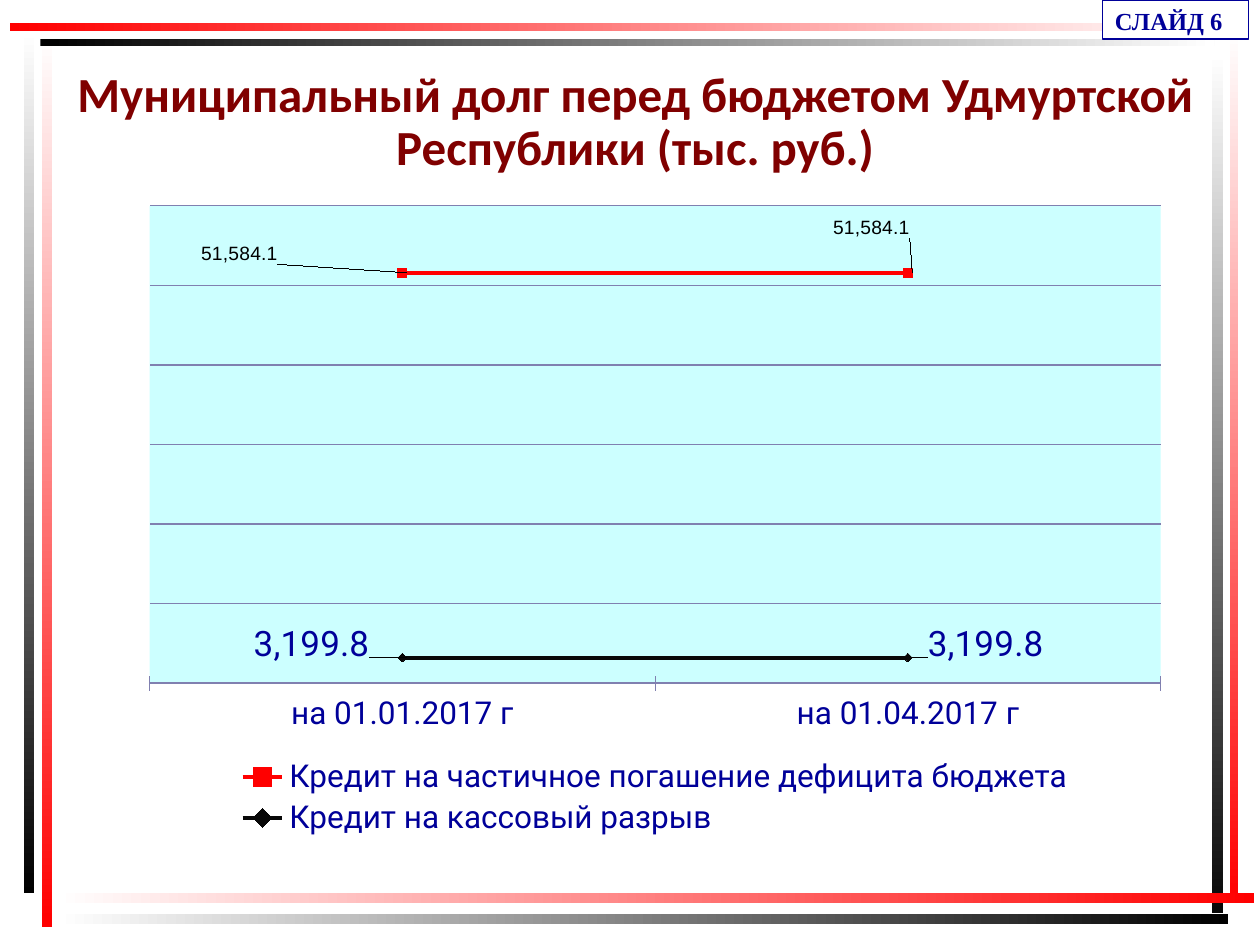
from lxml.etree import SubElement
from pptx import Presentation
from pptx.chart.data import CategoryChartData
from pptx.dml.color import RGBColor
from pptx.enum.chart import (XL_CHART_TYPE, XL_LABEL_POSITION, XL_LEGEND_POSITION,
                             XL_MARKER_STYLE, XL_TICK_LABEL_POSITION, XL_TICK_MARK)
from pptx.enum.shapes import MSO_SHAPE
from pptx.enum.text import MSO_ANCHOR, MSO_AUTO_SIZE, PP_ALIGN
from pptx.oxml.ns import qn
from pptx.util import Inches, Pt

COLORS = {"white": "FFFFFF", "red": "FF0000", "black": "000000", "title": "800000",
          "navy": "000099", "plot": "CCFFFF", "cash": "080808", "grid": "8080B0"}

# Frame bars: left, top, width, height, start colour, end colour
FRAME_BARS = [
    (0.33, 0.28, 0.08, 7.08, "white", "red"),
    (0.19, 0.25, 0.08, 6.84, "white", "black"),
    (9.76, 0.24, 0.07, 6.93, "white", "red"),
    (9.62, 0.42, 0.09, 6.83, "white", "cash"),
    (0.45, 7.09, 9.5, 0.08, "white", "red"),
    (0.45, 7.25, 9.3, 0.08, "white", "black"),
    (0.32, 0.31, 9.32, 0.06, "black", "white"),
    (0.08, 0.18, 9.56, 0.07, "red", "white"),
]

# Loans: name, amounts, colour, marker, label style, label offsets
LOANS = [
    ("Кредит на частичное погашение дефицита бюджета", (51584.1, 51584.1), "red",
     XL_MARKER_STYLE.SQUARE, ("Arial", 11, "black"), ((-0.2, -0.03), (-0.08, -0.07))),
    ("Кредит на кассовый разрыв", (3199.8, 3199.8), "cash",
     XL_MARKER_STYLE.DIAMOND, ("Roboto", 20, "navy"), ((-0.15, -0.02), (0.01, -0.02))),
]


def rgb(name):
    return RGBColor.from_string(COLORS[name])


def style_font(font, face, size, color, bold=False):
    font.name, font.size, font.bold = face, Pt(size), bold
    font.color.rgb = rgb(color)


def make_layout(**values):
    """Manual chart layout; values follow the schema order."""
    layout = SubElement(SubElement(SubElement(
        Presentation().slides._sldIdLst, qn("c:layout")), qn("c:manualLayout")), qn("c:x"))
    manual = layout.getparent()
    manual.remove(layout)
    for tag, value in values.items():
        SubElement(manual, qn(f"c:{tag}")).set("val", str(value))
    return manual.getparent()


def place_part(part, **values):
    for old in part.findall(qn("c:layout")):
        part.remove(old)
    return make_layout(xMode="edge", yMode="edge", **values)


def add_frame_bar(slide, left, top, width, height, start, end):
    bar = slide.shapes.add_shape(MSO_SHAPE.RECTANGLE, Inches(left), Inches(top),
                                 Inches(width), Inches(height))
    bar.shadow.inherit = False
    bar.line.fill.background()
    bar.fill.gradient()
    bar.fill.gradient_angle = 0 if width > height else 270
    for stop, color in zip(bar.fill.gradient_stops, (start, end)):
        stop.color.rgb = rgb(color)


def set_title(slide, text):
    title = slide.shapes.title
    title.left, title.top = Inches(0.47), Inches(0.47)
    title.width, title.height = Inches(9.14), Inches(0.94)
    frame = title.text_frame
    frame.text = text
    frame.word_wrap = True
    frame.auto_size = MSO_AUTO_SIZE.NONE
    frame.vertical_anchor = MSO_ANCHOR.BOTTOM
    frame.margin_left = frame.margin_right = Inches(0.1)
    frame.margin_top = frame.margin_bottom = Inches(0.01)
    paragraph = frame.paragraphs[0]
    paragraph.alignment = PP_ALIGN.CENTER
    paragraph.line_spacing = 0.9
    style_font(paragraph.runs[0].font, "Calibri", 28, "title", True)


def style_loan(series, color, marker, label_style, offsets):
    series.smooth = False
    series.format.line.color.rgb = rgb(color)
    series.format.line.width = Pt(2.25)
    series.marker.style, series.marker.size = marker, 5
    series.marker.format.fill.solid()
    series.marker.format.fill.fore_color.rgb = rgb(color)
    series.marker.format.line.color.rgb = rgb(color)
    for index, (x, y) in enumerate(offsets):
        label = series.points[index].data_label
        style_font(label.font, *label_style)
        label.position = XL_LABEL_POSITION.RIGHT
    for label, (x, y) in zip(series._element.iter(qn("c:dLbl")), offsets):
        label.find(qn("c:idx")).addnext(make_layout(x=x, y=y))


def style_axes(chart):
    dates, amounts = chart.category_axis, chart.value_axis
    dates.major_tick_mark = XL_TICK_MARK.CROSS
    dates.format.line.color.rgb = rgb("grid")
    amounts.minimum_scale, amounts.maximum_scale = 0, 60000
    amounts.major_unit = 10000
    amounts.major_tick_mark = XL_TICK_MARK.NONE
    amounts.tick_label_position = XL_TICK_LABEL_POSITION.NONE
    amounts.format.line.fill.background()
    amounts.major_gridlines.format.line.color.rgb = rgb("grid")
    amounts.major_gridlines.format.line.width = Pt(0.75)


def add_debt_chart(slide):
    debt = CategoryChartData(number_format="#,##0.0")
    debt.categories = ["на 01.01.2017 г", "на 01.04.2017 г"]
    for name, amounts, *_ in LOANS:
        debt.add_series(name, amounts)
    chart = slide.shapes.add_chart(XL_CHART_TYPE.LINE_MARKERS, Inches(1.02), Inches(1.53),
                                   Inches(8.36), Inches(5.19), debt).chart
    chart.has_title = False
    style_font(chart.font, "Roboto", 18, "navy")
    style_axes(chart)
    for series, (_, _, *style) in zip(chart.plots[0].series, LOANS):
        style_loan(series, *style)

    # Legend under the plot
    chart.has_legend = True
    chart.legend.position = XL_LEGEND_POSITION.BOTTOM
    chart.legend.include_in_layout = False
    style_font(chart.legend.font, "Roboto", 18, "navy")
    legend = chart.legend._element
    legend_layout = place_part(legend, x=0.1, y=0.86, w=0.8, h=0.13)
    legend.find(qn("c:legendPos")).addnext(legend_layout)

    # Plot area position and background
    plot_area = chart._chartSpace.chart.plotArea
    plot_area.insert(0, place_part(plot_area, x=0.02, y=0.02, w=0.96, h=0.73))
    plot_area[0][0].insert(0, plot_area.makeelement(qn("c:layoutTarget"), {"val": "inner"}))
    fill = SubElement(SubElement(plot_area, qn("c:spPr")), qn("a:solidFill"))
    SubElement(fill, qn("a:srgbClr")).set("val", COLORS["plot"])


def add_slide_tag(slide, text):
    tag = slide.shapes.add_shape(MSO_SHAPE.RECTANGLE, Inches(8.75), 0,
                                 Inches(1.16), Inches(0.31))
    tag.shadow.inherit = False
    tag.fill.solid()
    tag.fill.fore_color.rgb = rgb("white")
    tag.line.color.rgb = rgb("navy")
    tag.line.width = Pt(0.75)
    frame = tag.text_frame
    frame.text = text
    frame.word_wrap = False
    frame.vertical_anchor = MSO_ANCHOR.TOP
    frame.paragraphs[0].alignment = PP_ALIGN.LEFT
    style_font(frame.paragraphs[0].runs[0].font, "Times New Roman", 14, "navy", True)


def main():
    deck = Presentation()
    deck.slide_width, deck.slide_height = Inches(10), Inches(7.5)
    slide = deck.slides.add_slide(deck.slide_layouts[5])
    for bar in FRAME_BARS:
        add_frame_bar(slide, *bar)
    set_title(slide, "Муниципальный долг перед бюджетом Удмуртской Республики (тыс. руб.)")
    add_debt_chart(slide)
    add_slide_tag(slide, "СЛАЙД 6")
    deck.save("out.pptx")


if __name__ == "__main__":
    main()
